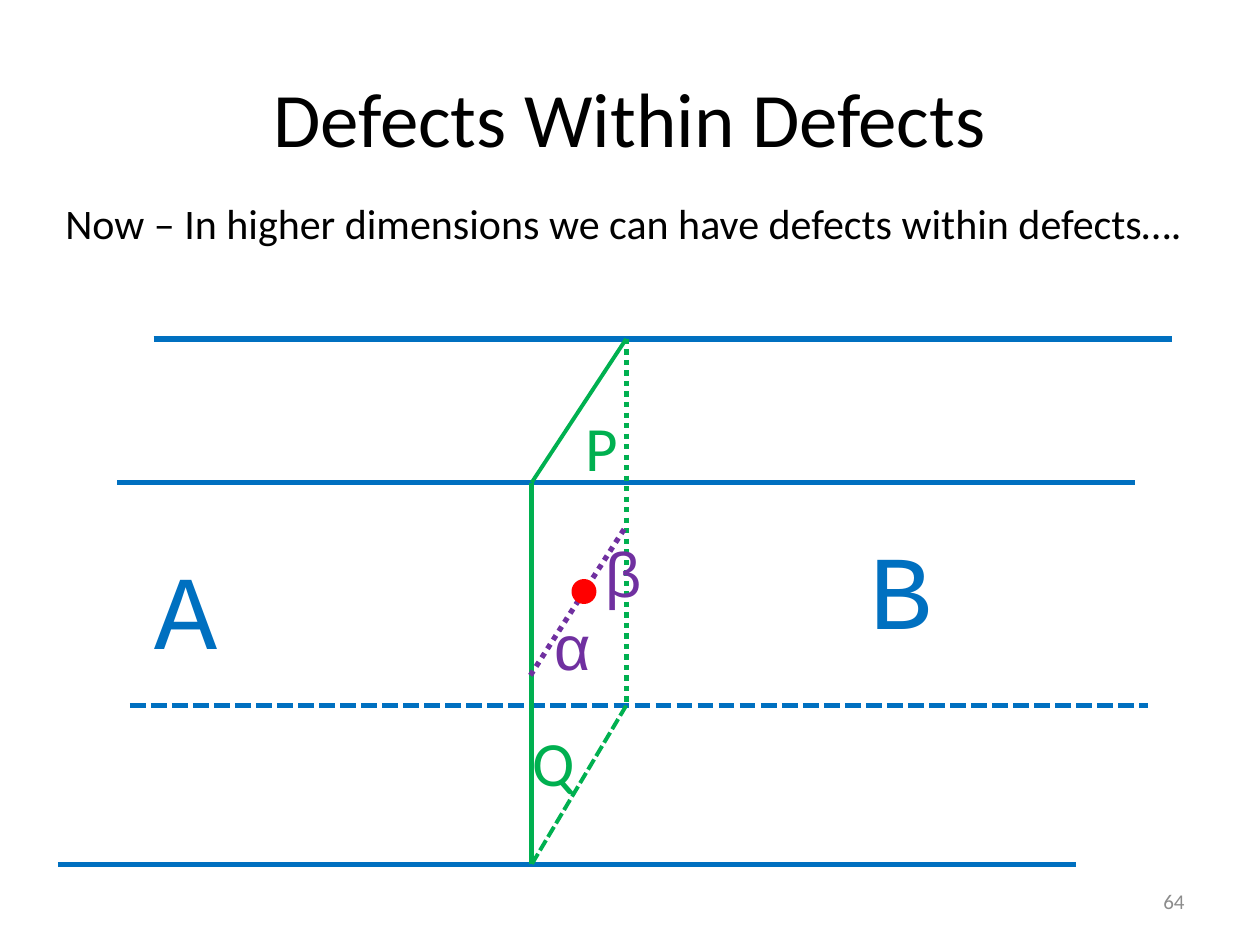
from pptx import Presentation
from pptx.dml.color import RGBColor
from pptx.enum import dml, shapes, text
from pptx.oxml import ns
from pptx.util import Inches, Pt
from lxml import etree

BLUE, GREEN, PURPLE, RED = "0070C0", "00B050", "7030A0", "FF0000"
BLACK, GRAY = "000000", "8C8C8C"
DOT, DASH = dml.MSO_LINE.ROUND_DOT, dml.MSO_LINE.SQUARE_DOT
LEFT, CENTER, RIGHT = text.PP_ALIGN.LEFT, text.PP_ALIGN.CENTER, text.PP_ALIGN.RIGHT
TOP, MIDDLE = text.MSO_ANCHOR.TOP, text.MSO_ANCHOR.MIDDLE

# Corners of the defect plane that separates regions A and B
back_top, back_bottom = (4.97, 2.69), (4.97, 5.6)
front_top, front_bottom = (4.22, 3.83), (4.22, 6.86)

# Edges of the regions: left end, height, dash
EDGE_LENGTH = 8.08
region_edges = [
    (1.22, back_top[1], None),
    (0.46, front_bottom[1], None),
    (0.93, front_top[1], None),
    (1.03, back_bottom[1], DASH),
]

# Start, end, colour, width, dash
defect_lines = [
    (back_top, front_top, GREEN, 2.25, None),
    (front_top, front_bottom, GREEN, 3, None),
    (back_top, back_bottom, GREEN, 3, DOT),
    (back_bottom, front_bottom, GREEN, 2.25, DASH),
    ((4.21, 5.36), (4.96, 4.19), PURPLE, 3, DOT),
]

point_defect = (4.55, 4.61, 0.17, 0.17)

# Words, position and size, font, points, colour, alignment, anchor
captions = [
    ("Defects Within Defects", (0.5, 0.3, 9, 1.25), "Calibri", 44, BLACK, CENTER, MIDDLE),
    ("Now – In higher dimensions we can have defects within defects….",
     (0.42, 1.52, 9.24, 0.5), "Calibri", 24, BLACK, LEFT, TOP),
    ("64", (7.17, 6.95, 2.33, 0.4), "Calibri", 12, GRAY, RIGHT, MIDDLE),
]
labels = [
    ("P", (4.55, 3.19, 1.83, 0.71), "Calibri", 36, GREEN, LEFT, TOP),
    ("Q", (4.13, 5.69, 2, 0.71), "Calibri", 36, GREEN, LEFT, TOP),
    ("α", (4.3, 4.77, 1.42, 0.71), "Arial", 36, PURPLE, LEFT, TOP),
    ("β", (4.71, 4.19, 1.83, 0.71), "Arial", 36, PURPLE, LEFT, TOP),
    ("A", (1.13, 4.27, 1.58, 1.11), "Courier New", 60, BLUE, LEFT, TOP),
    ("B", (6.8, 4.11, 1.92, 1.11), "Courier New", 60, BLUE, LEFT, TOP),
]


def color(value):
    return RGBColor.from_string(value)


def add_line(slide, start, end, line_color, width, dash):
    line = slide.shapes.add_connector(
        shapes.MSO_CONNECTOR.STRAIGHT, *map(Inches, start + end))
    line.line.color.rgb = color(line_color)
    line.line.width = Pt(width)
    if dash is not None:
        line.line.dash_style = dash
    etree.SubElement(line._element.spPr, ns.qn("a:effectLst"))


def add_text(slide, words, place, font, size, text_color, align, anchor):
    box = slide.shapes.add_textbox(*map(Inches, place))
    frame = box.text_frame
    frame.word_wrap = True
    frame.vertical_anchor = anchor
    frame.text = words
    para = frame.paragraphs[0]
    para.alignment = align
    span = para.runs[0]
    span.font.name = font
    span.font.size = Pt(size)
    span.font.color.rgb = color(text_color)


def add_point(slide, place):
    point = slide.shapes.add_shape(shapes.MSO_SHAPE.OVAL, *map(Inches, place))
    point.shadow.inherit = False
    point.fill.solid()
    point.fill.fore_color.rgb = color(RED)
    point.line.color.rgb = color(RED)
    point.line.width = Pt(2)


def main():
    deck = Presentation()
    deck.slide_width, deck.slide_height = Inches(10), Inches(7.5)
    slide = deck.slides.add_slide(deck.slide_layouts[6])

    for left, height, dash in region_edges:
        add_line(slide, (left, height), (left + EDGE_LENGTH, height), BLUE, 3, dash)
    for defect_line in defect_lines:
        add_line(slide, *defect_line)
    add_point(slide, point_defect)
    for item in captions + labels:
        add_text(slide, *item)

    deck.save("out.pptx")


if __name__ == "__main__":
    main()
